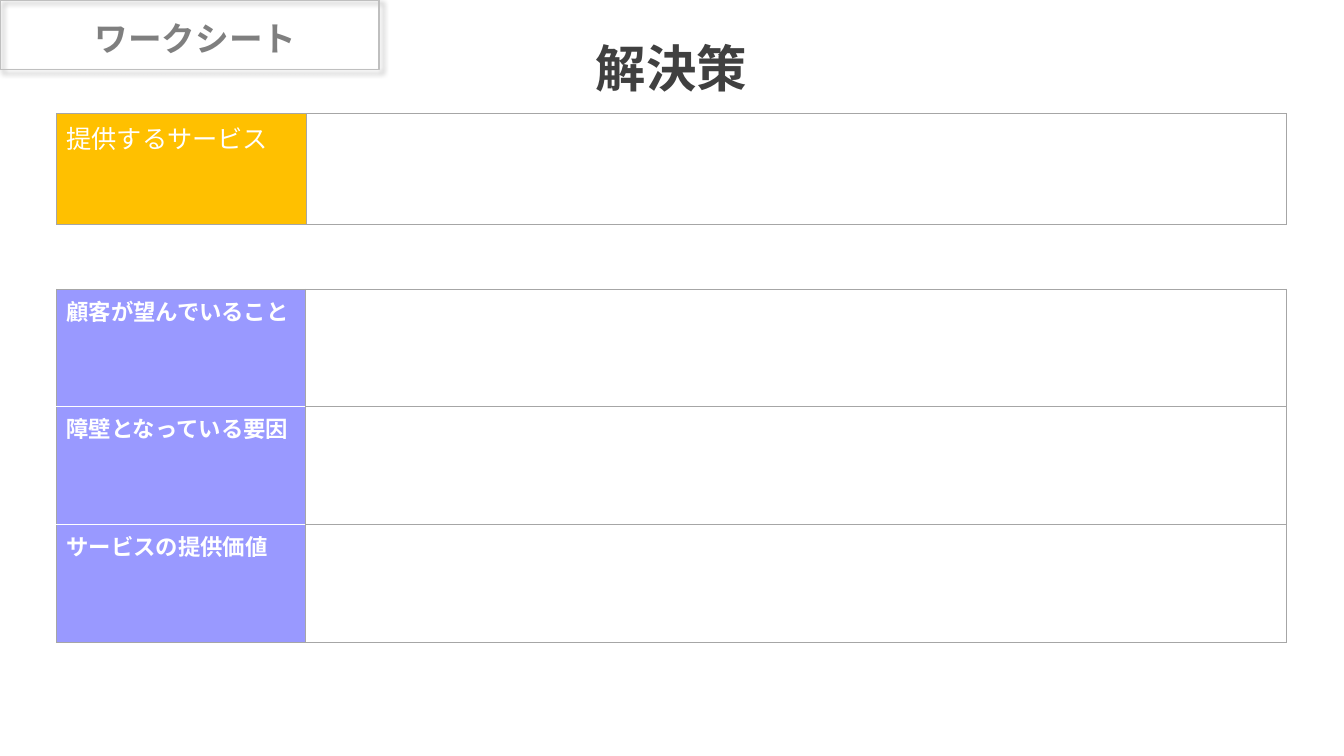
"""Build the solution worksheet slide with its two fill-in tables."""
from lxml.etree import SubElement
from pptx import Presentation
from pptx.dml.color import RGBColor
from pptx.enum.shapes import MSO_SHAPE
from pptx.enum.text import MSO_ANCHOR, PP_ALIGN
from pptx.oxml import parse_xml
from pptx.oxml.ns import nsdecls, qn
from pptx.util import Inches, Pt

FONT = "Noto Sans CJK JP"
GRAY = "A6A6A6"
WHITE = "FFFFFF"


def rgb(value):
    return RGBColor.from_string(value)


def write(tf, text, size, color, bold=True):
    tf.text = text
    p = tf.paragraphs[0]
    r = p.runs[0]
    r.font.size = Pt(size)
    r.font.bold = bold
    r.font.color.rgb = rgb(color)
    r.font.name = FONT
    SubElement(r.font._element, qn("a:ea"), typeface=FONT)
    return p


prs = Presentation()
prs.slide_width = Inches(13.33)
prs.slide_height = Inches(7.5)
s = prs.slides.add_slide(prs.slide_layouts[6])

title = s.shapes.add_textbox(Inches(0.56), Inches(0.29), Inches(12.2), Inches(0.69))
tf = title.text_frame
tf.word_wrap = True
tf.vertical_anchor = MSO_ANCHOR.BOTTOM
tf.margin_left = tf.margin_right = tf.margin_top = tf.margin_bottom = 0
p = write(tf, "解決策", 36, "404040")
p.alignment = PP_ALIGN.CENTER
p.line_spacing = 0.9

tables = [
    (1.13, 1.1, 2.48, "FFC000", 18, False, ["提供するサービス"]),
    (2.87, 3.5, 2.47, "9999FF", 16, True,
     ["顧客が望んでいること", "障壁となっている要因", "サービスの提供価値"]),
]
for top, height, label_width, fill, size, bold, labels in tables:
    table = s.shapes.add_table(len(labels), 2, Inches(0.56), Inches(top),
                               Inches(12.2), Inches(height)).table
    table.first_row = table.horz_banding = False
    table.columns[0].width = Inches(label_width)
    table.columns[1].width = Inches(12.2 - label_width)
    for i, label in enumerate(labels):
        for j in range(2):
            cell = table.cell(i, j)
            top_color = WHITE if j == 0 and i > 0 else GRAY
            bottom_color = WHITE if j == 0 and i < len(labels) - 1 else GRAY
            borders = {"lnL": GRAY, "lnR": GRAY, "lnT": top_color, "lnB": bottom_color}
            tc_pr = cell._tc.get_or_add_tcPr()
            for side, color in borders.items():
                tc_pr.append(parse_xml(
                    f'<a:{side} {nsdecls("a")} w="{Pt(0.75)}"><a:solidFill>'
                    f'<a:srgbClr val="{color}"/></a:solidFill></a:{side}>'))
            if j == 0:
                cell.fill.solid()
                cell.fill.fore_color.rgb = rgb(fill)
                write(cell.text_frame, label, size, WHITE, bold)
            else:
                cell.fill.background()

badge = s.shapes.add_group_shape()
sp = badge.shapes.add_shape(MSO_SHAPE.RECTANGLE, 0, 0, Inches(3.76), Inches(0.69))
sp.fill.background()
sp.line.color.rgb = rgb("BFBFBF")
sp.line.width = Pt(1)
sp.shadow.inherit = False
sp._element.spPr.find(qn("a:effectLst")).append(parse_xml(
    f'<a:outerShdw {nsdecls("a")} blurRad="{Pt(4)}" dist="{Pt(3)}" dir="2700000" '
    'algn="tl" rotWithShape="0"><a:srgbClr val="000000"><a:alpha val="40000"/>'
    '</a:srgbClr></a:outerShdw>'))

caption = badge.shapes.add_textbox(Inches(0.12), Inches(0.13), Inches(3.64), Inches(0.5))
caption.text_frame.word_wrap = True
p = write(caption.text_frame, "ワークシート", 24, "7F7F7F")
p.alignment = PP_ALIGN.CENTER

prs.save("out.pptx")
